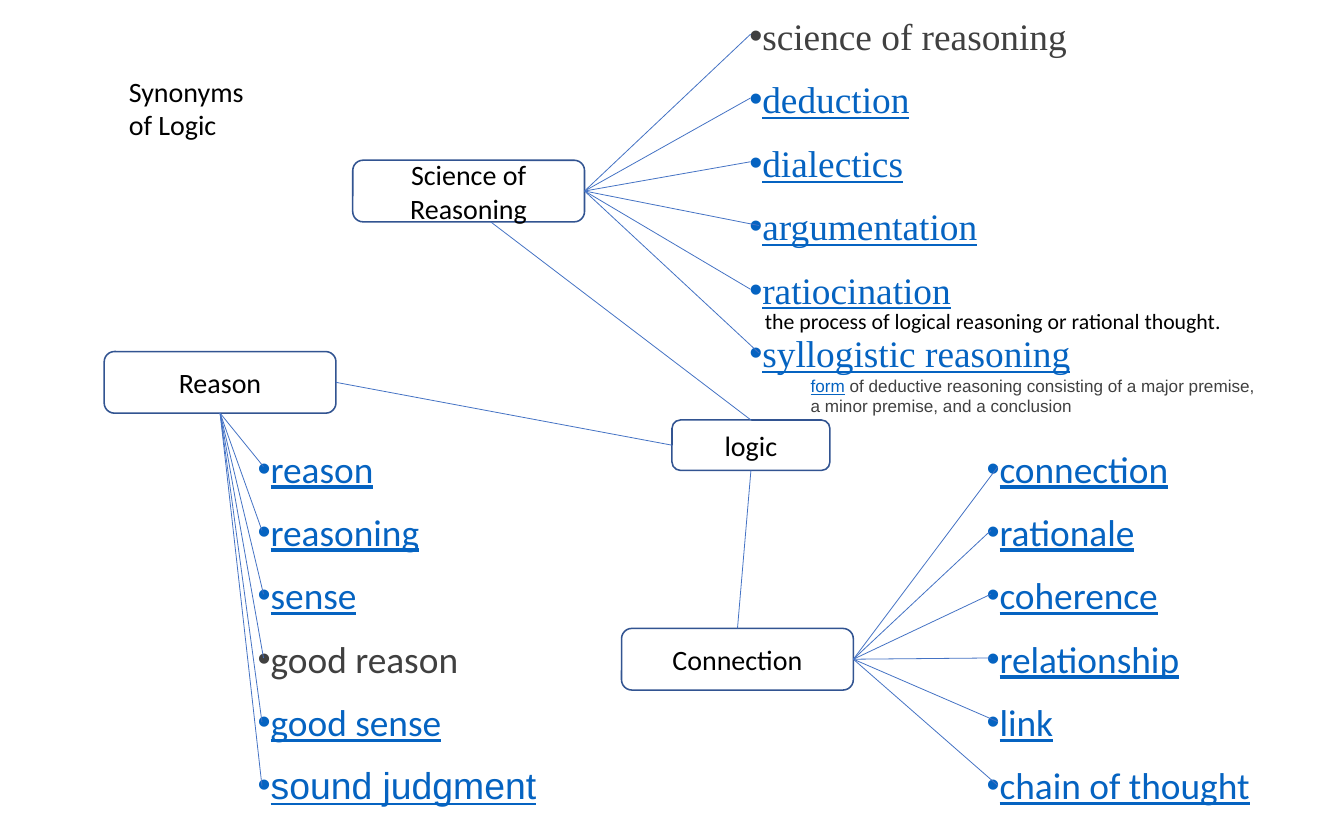
import dataclasses

import lxml.etree
import pptx
import pptx.dml.color
import pptx.enum.shapes
import pptx.enum.text
import pptx.oxml.ns
import pptx.util

Pt = pptx.util.Pt
TOP, LEFT, BOTTOM, RIGHT = range(4)
ALIGN = pptx.enum.text.PP_ALIGN
ANCHOR = pptx.enum.text.MSO_ANCHOR


@dataclasses.dataclass(frozen=True)
class Theme:
    ink: str = "000000"
    plain: str = "404040"
    link: str = "0563C1"
    paper: str = "FFFFFF"
    outline: str = "325491"
    connector: str = "4472C4"
    sans: str = "Calibri"
    serif: str = "Times New Roman"
    grotesque: str = "Arial"
    list_size: float = 24
    label_size: float = 18
    note_size: float = 14
    detail_size: float = 11
    outline_width: float = 1
    connector_width: float = 0.5


@dataclasses.dataclass(frozen=True)
class Branch:
    name: str
    hub_box: tuple
    fan_side: int
    list_box: tuple
    font: str
    words: tuple
    fan_insets: tuple


THEME = Theme()
HUB_SIZE = (149, 39.6)
LIST_SIZE = (227.5, 242.6)
LIST_LINE, LIST_GAP = 28.75, 12
FIRST_BULLET, BULLET_STEP = 17, 41
PLAIN_WORDS = {"science of reasoning", "good reason"}
FONT_EXCEPTIONS = {"sound judgment": THEME.grotesque}

BRANCHES = (
    Branch("Science of Reasoning", (226.8, 103, *HUB_SIZE), RIGHT,
           (474.5, 5, *LIST_SIZE), THEME.serif,
           ("science of reasoning", "deduction", "dialectics",
            "argumentation", "ratiocination", "syllogistic reasoning"),
           (8, 8, 8, 13.5, 8, 13.5)),
    Branch("Connection", (399.6, 404, *HUB_SIZE), RIGHT,
           (627, 283, *LIST_SIZE), THEME.sans,
           ("connection", "rationale", "coherence",
            "relationship", "link", "chain of thought"),
           (14.5, 10, 10, 10, 14.5, 14.5)),
    Branch("Reason", (67, 226, *HUB_SIZE), BOTTOM,
           (158.4, 283, *LIST_SIZE), THEME.sans,
           ("reason", "reasoning", "sense",
            "good reason", "good sense", "sound judgment"),
           (11, 10, 11, 11, 10, 10)),
)


def rgb(color):
    return pptx.dml.color.RGBColor.from_string(color)


def place(shape, box):
    shape.left, shape.top, shape.width, shape.height = map(Pt, box)


def set_frame(frame, anchor=ANCHOR.TOP, wrap=True):
    frame.auto_size = pptx.enum.text.MSO_AUTO_SIZE.NONE
    frame.word_wrap = wrap
    frame.vertical_anchor = anchor


def add_run(paragraph, text, font, size, color, underline=False):
    run = paragraph.add_run()
    run.text = text
    run.font.name = font
    run.font.size = Pt(size)
    run.font.color.rgb = rgb(color)
    run.font.underline = underline
    run.font.bold = False


def add_bullet(paragraph):
    properties = paragraph._p.get_or_add_pPr()
    properties.set("marL", "0")
    properties.set("indent", "0")
    for tag, name, value in (("a:buFont", "typeface", THEME.grotesque),
                             ("a:buChar", "char", "•")):
        element = lxml.etree.SubElement(properties, pptx.oxml.ns.qn(tag))
        element.set(name, value)


def add_title(slide, box):
    title = slide.shapes.title
    place(title, box)
    set_frame(title.text_frame)
    paragraph = title.text_frame.paragraphs[0]
    paragraph.alignment = ALIGN.LEFT
    add_run(paragraph, "Synonyms of Logic", THEME.sans, THEME.label_size, THEME.ink)


def add_hub(slide, box, name):
    hub = slide.shapes.add_shape(
        pptx.enum.shapes.MSO_SHAPE.ROUNDED_RECTANGLE, *map(Pt, box))
    hub.shadow.inherit = False
    hub.fill.solid()
    hub.fill.fore_color.rgb = rgb(THEME.paper)
    hub.line.color.rgb = rgb(THEME.outline)
    hub.line.width = Pt(THEME.outline_width)
    set_frame(hub.text_frame, ANCHOR.MIDDLE)
    paragraph = hub.text_frame.paragraphs[0]
    paragraph.alignment = ALIGN.CENTER
    add_run(paragraph, name, THEME.sans, THEME.label_size, THEME.ink)
    return hub


def add_line(slide, hub, side, end=(0, 0)):
    line = slide.shapes.add_connector(
        pptx.enum.shapes.MSO_CONNECTOR.STRAIGHT, 0, 0, *map(Pt, end))
    line.begin_connect(hub, side)
    line.line.color.rgb = rgb(THEME.connector)
    line.line.width = Pt(THEME.connector_width)
    lxml.etree.SubElement(line._element.spPr, pptx.oxml.ns.qn("a:effectLst"))
    return line


def add_word_list(placeholder, branch):
    place(placeholder, branch.list_box)
    frame = placeholder.text_frame
    set_frame(frame)
    for index, word in enumerate(branch.words):
        paragraph = frame.add_paragraph() if index else frame.paragraphs[0]
        paragraph.line_spacing = Pt(LIST_LINE)
        paragraph.space_before = Pt(LIST_GAP if index else 0)
        add_bullet(paragraph)
        linked = word not in PLAIN_WORDS
        add_run(paragraph, word, FONT_EXCEPTIONS.get(word, branch.font),
                THEME.list_size, THEME.link if linked else THEME.plain, linked)


def add_branch(slide, placeholder, branch):
    add_word_list(placeholder, branch)
    hub = add_hub(slide, branch.hub_box, branch.name)
    left, top = branch.list_box[:2]
    for index, inset in enumerate(branch.fan_insets):
        bullet = (left + inset, top + FIRST_BULLET + index * BULLET_STEP)
        add_line(slide, hub, branch.fan_side, bullet)
    return hub


def add_center(slide, box, science, connection, reason):
    center = add_hub(slide, box, "logic")
    add_line(slide, center, TOP, (315.4, 142.6))
    add_line(slide, center, LEFT).end_connect(reason, RIGHT)
    add_line(slide, center, BOTTOM).end_connect(connection, TOP)


def add_note(slide, box, runs, wrap=True):
    note = slide.shapes.add_textbox(*map(Pt, box))
    set_frame(note.text_frame, wrap=wrap)
    for run in runs:
        add_run(note.text_frame.paragraphs[0], *run)


def main():
    presentation = pptx.Presentation()
    presentation.slide_width, presentation.slide_height = Pt(864), Pt(540)
    slide = presentation.slides.add_slide(
        presentation.slide_layouts.get_by_name("Comparison"))
    add_title(slide, (75.6, 44, 107.3, 51))
    bodies = list(slide.placeholders)[1:]
    hubs = [add_branch(slide, body, branch)
            for body, branch in zip(bodies, BRANCHES)]
    for unused in bodies[len(BRANCHES):]:
        unused._element.getparent().remove(unused._element)
    add_center(slide, (432, 270, 101.5, 32.4), *hubs)
    add_note(slide, (514, 237.6, 308.2, 33.8), (
        ("form", THEME.grotesque, THEME.detail_size, THEME.link, True),
        (" of deductive reasoning consisting of a major premise, "
         "a minor premise, and a conclusion",
         THEME.grotesque, THEME.detail_size, THEME.plain)))
    add_note(slide, (484.6, 194.4, 311, 24.5), (
        ("the process of logical reasoning or rational thought.",
         THEME.sans, THEME.note_size, THEME.ink),), wrap=False)
    presentation.save("out.pptx")


if __name__ == "__main__":
    main()
